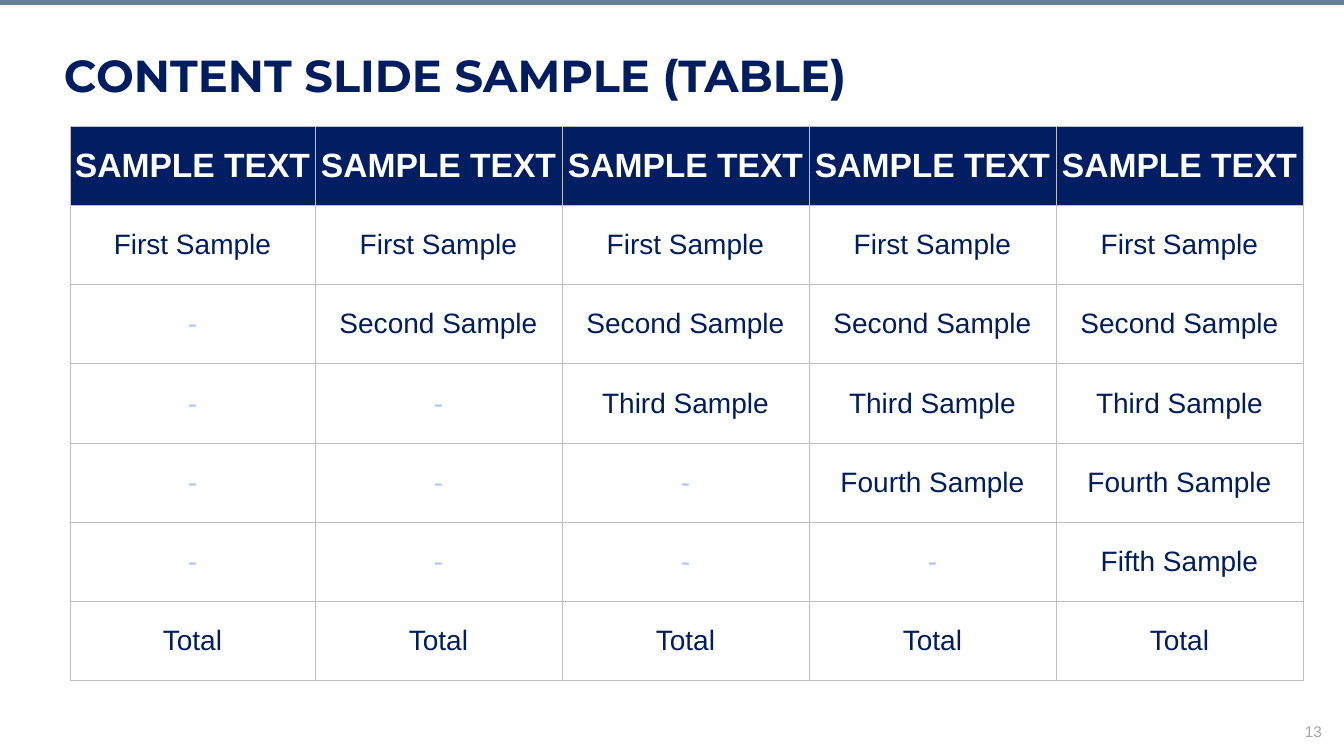
from lxml import etree
from pptx import Presentation
from pptx import util as u
from pptx.dml.color import RGBColor
from pptx.enum import shapes, text
from pptx.oxml import ns

EMU_PER_PX = 914400 / 100.8
NAVY = "001D5F"
HEADER_NAVY = "001E61"
PALE_BLUE = "ACC5FF"
GRID_GREY = "BFBFBF"
COLUMN_COUNT = 5
SAMPLES = ["First Sample", "Second Sample", "Third Sample", "Fourth Sample", "Fifth Sample"]


def px(length):
    return u.Emu(round(length * EMU_PER_PX))


def colour(hex_code):
    return RGBColor.from_string(hex_code)


def write(frame, words, size, ink, font="Arial", bold=False,
          align=text.PP_ALIGN.LEFT, spacing=None):
    paragraph = frame.paragraphs[0]
    paragraph.alignment = align
    paragraph.line_spacing = spacing
    run = paragraph.add_run()
    run.text = words
    run.font.size = u.Pt(size)
    run.font.name = font
    run.font.bold = bold
    run.font.color.rgb = colour(ink)


def add_label(slide, left, top, width, height, words, **style):
    frame = slide.shapes.add_textbox(px(left), px(top), px(width), px(height)).text_frame
    frame.word_wrap = True
    write(frame, words, **style)


def add_bar(slide, left, top, width, height, paint):
    bar = slide.shapes.add_shape(shapes.MSO_SHAPE.RECTANGLE,
                                 px(left), px(top), px(width), px(height))
    bar.shadow.inherit = False
    bar.fill.solid()
    bar.fill.fore_color.rgb = colour(paint)
    bar.line.fill.background()


def add_borders(cell, paint, width):
    properties = cell._tc.get_or_add_tcPr()
    for side in ("a:lnL", "a:lnR", "a:lnT", "a:lnB"):
        line = etree.SubElement(properties, ns.qn(side), w=str(u.Pt(width)))
        fill = etree.SubElement(line, ns.qn("a:solidFill"))
        etree.SubElement(fill, ns.qn("a:srgbClr"), val=paint)


def fill_cell(cell, words, paint=None, **style):
    cell.vertical_anchor = text.MSO_ANCHOR.MIDDLE
    cell.margin_left = cell.margin_right = px(4)
    cell.margin_top = cell.margin_bottom = px(2)
    add_borders(cell, GRID_GREY, 0.75)
    if paint:
        cell.fill.solid()
        cell.fill.fore_color.rgb = colour(paint)
    else:
        cell.fill.background()
    write(cell.text_frame, words, align=text.PP_ALIGN.CENTER, **style)


def add_sample_table(slide, left, top, width, height):
    staircase = [[sample if column >= step else "-" for column in range(COLUMN_COUNT)]
                 for step, sample in enumerate(SAMPLES)]
    rows = [["SAMPLE TEXT"] * COLUMN_COUNT, *staircase, ["Total"] * COLUMN_COUNT]
    table = slide.shapes.add_table(len(rows), COLUMN_COUNT,
                                   px(left), px(top), px(width), px(height)).table
    table.horz_banding = False
    table.first_row = False
    for index, column in enumerate(table.columns):
        column.width = px(245 if index == 0 else 247)
    for row_index, row in enumerate(rows):
        for column_index, words in enumerate(row):
            cell = table.cell(row_index, column_index)
            if row_index == 0:
                fill_cell(cell, words, HEADER_NAVY, size=24, ink="FFFFFF", bold=True)
            else:
                fill_cell(cell, words, size=20, ink=PALE_BLUE if words == "-" else NAVY)


def main():
    deck = Presentation()
    deck.slide_width, deck.slide_height = px(1344), px(756)
    slide = deck.slides.add_slide(deck.slide_layouts[6])
    add_label(slide, 927, 717, 405, 29, "13", size=11, ink="A6A6A6",
              align=text.PP_ALIGN.RIGHT)
    add_bar(slide, 0, 0, 1344, 5, "688096")
    add_label(slide, 54, 49, 1234, 78, "CONTENT SLIDE SAMPLE (TABLE)", size=32,
              ink=NAVY, font="Montserrat", bold=True, spacing=0.9)
    add_sample_table(slide, 70, 126, 1233, 555)
    deck.save("out.pptx")


if __name__ == "__main__":
    main()
